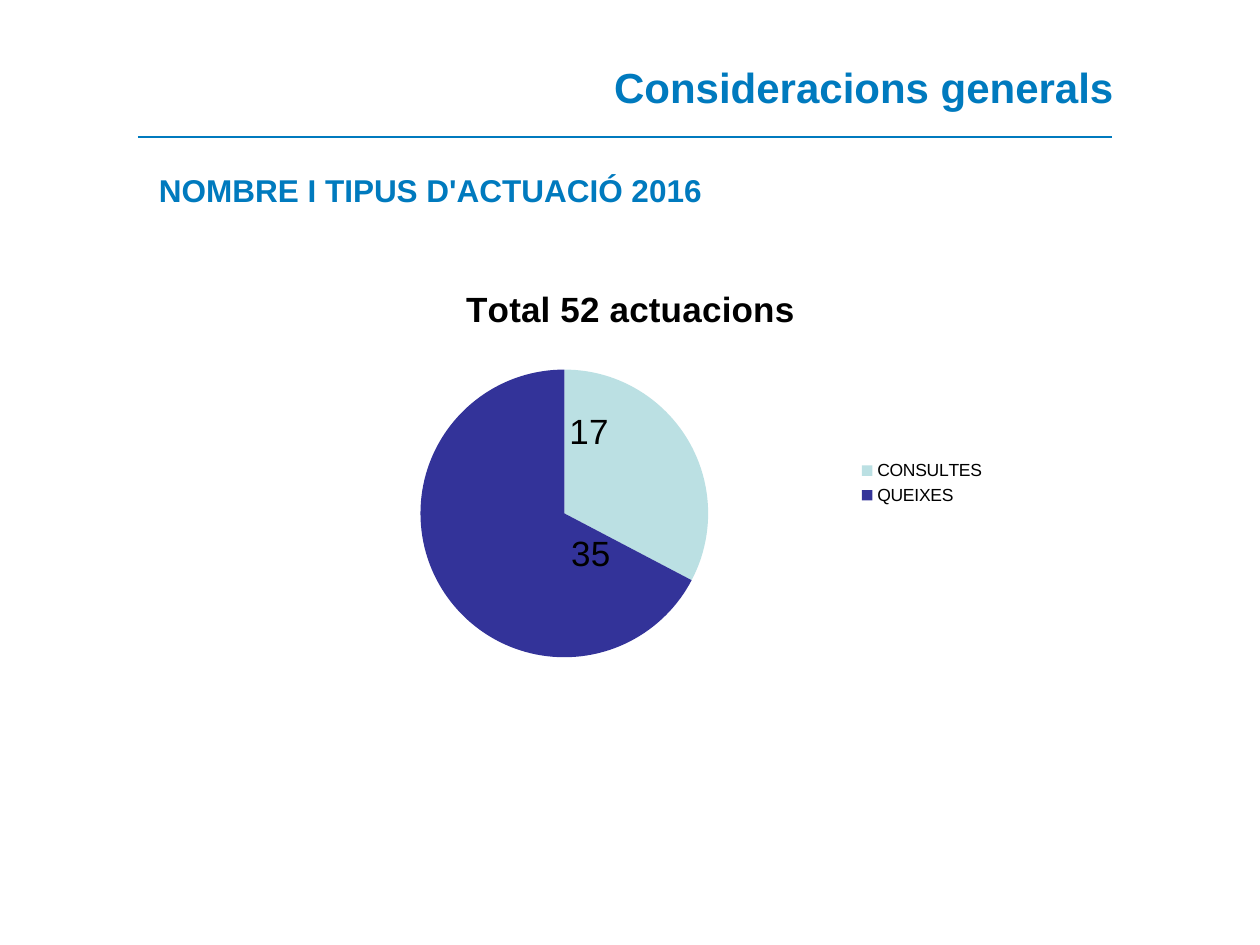
from lxml.etree import SubElement
from pptx import Presentation
from pptx.chart.data import CategoryChartData
from pptx.dml.color import RGBColor
from pptx.enum.chart import XL_CHART_TYPE as ChartType
from pptx.enum.chart import XL_LABEL_POSITION as LabelPosition
from pptx.enum.chart import XL_LEGEND_POSITION as LegendPosition
from pptx.enum.shapes import MSO_CONNECTOR as Connector
from pptx.enum.text import PP_ALIGN as Align
from pptx.oxml import parse_xml
from pptx.oxml.ns import nsdecls, qn
from pptx.util import Pt

EMU_PER_PX = 914400 // 126
COLORS = {"blue": "007ABE", "black": "000000", "pale": "BBE0E3", "indigo": "333399"}


def px(length):
    return length * EMU_PER_PX


def manual_layout(**settings):
    """Return a c:layout element holding the given manual settings in order."""
    items = "".join(f'<c:{key} val="{value}"/>' for key, value in settings.items())
    return parse_xml(
        f'<c:layout {nsdecls("c")}><c:manualLayout>{items}</c:manualLayout></c:layout>'
    )


class SlideBuilder:
    font_name = "Arial"

    def __init__(self, slide):
        self.slide = slide

    def style(self, font, size, color, bold=False):
        font.name, font.size, font.bold = self.font_name, Pt(size), bold
        font.color.rgb = RGBColor.from_string(COLORS[color])

    def text(self, words, box, size, align, wrap=True):
        frame = self.slide.shapes.add_textbox(*map(px, box)).text_frame
        frame.word_wrap = wrap
        paragraph = frame.paragraphs[0]
        paragraph.text = words
        paragraph.alignment = align
        self.style(paragraph.font, size, "blue", bold=True)

    def rule(self, left, right, y):
        line = self.slide.shapes.add_connector(
            Connector.STRAIGHT, px(left), px(y), px(right), px(y)
        )
        line.line.color.rgb = RGBColor.from_string(COLORS["blue"])
        line.line.width = Pt(0.75)
        SubElement(line._element.spPr, qn("a:effectLst"))

    def pie(self, title, box, slices):
        """Draw slices given as (category, value, color, label shift)."""
        data = CategoryChartData()
        data.categories = [category for category, *_ in slices]
        data.add_series("Series 1", [value for _, value, *_ in slices])
        chart = self.slide.shapes.add_chart(ChartType.PIE, *map(px, box), data).chart
        self.style(chart.font, 10, "black")

        chart.has_title = True
        heading = chart.chart_title.text_frame.paragraphs[0]
        heading.text = title
        self.style(heading.font, 20, "black", bold=True)

        chart.has_legend = True
        chart.legend.position = LegendPosition.RIGHT
        chart.legend.include_in_layout = False

        plot = chart.plots[0]
        plot.vary_by_categories = True
        for index, (_, _, color, (shift_x, shift_y)) in enumerate(slices):
            point = plot.series[0].points[index]
            point.format.fill.solid()
            point.format.fill.fore_color.rgb = RGBColor.from_string(COLORS[color])
            label = point.data_label
            self.style(label.font, 20, "black")
            label.position = LabelPosition.CENTER
            label_element = label.font._element.getparent().getparent()
            while label_element.tag != qn("c:dLbl"):
                label_element = label_element.getparent()
            label_element.find(qn("c:idx")).addnext(manual_layout(x=shift_x, y=shift_y))

        plot_area = plot._element.getparent()
        for layout in plot_area.findall(qn("c:layout")):
            plot_area.remove(layout)
        plot_area.insert(0, manual_layout(
            layoutTarget="inner", xMode="edge", yMode="edge",
            x=0.09, y=0.24, w=0.64, h=0.66,
        ))


def main():
    presentation = Presentation()
    presentation.slide_width, presentation.slide_height = px(1260), px(945)
    slide = presentation.slides.add_slide(presentation.slide_layouts[6])
    builder = SlideBuilder(slide)
    builder.rule(138, 1112, 137)
    builder.text("Consideracions generals", (446, 55, 680, 66), 24, Align.RIGHT)
    builder.pie("Total 52 actuacions", (263, 265, 735, 436), [
        ("CONSULTES", 17, "pale", (-0.05, -0.1)),
        ("QUEIXES", 35, "indigo", (0.12, 0.01)),
    ])
    builder.text("NOMBRE I TIPUS D'ACTUACIÓ 2016", (144, 165, 573, 50), 18,
                 Align.CENTER, wrap=False)
    presentation.save("out.pptx")


if __name__ == "__main__":
    main()
